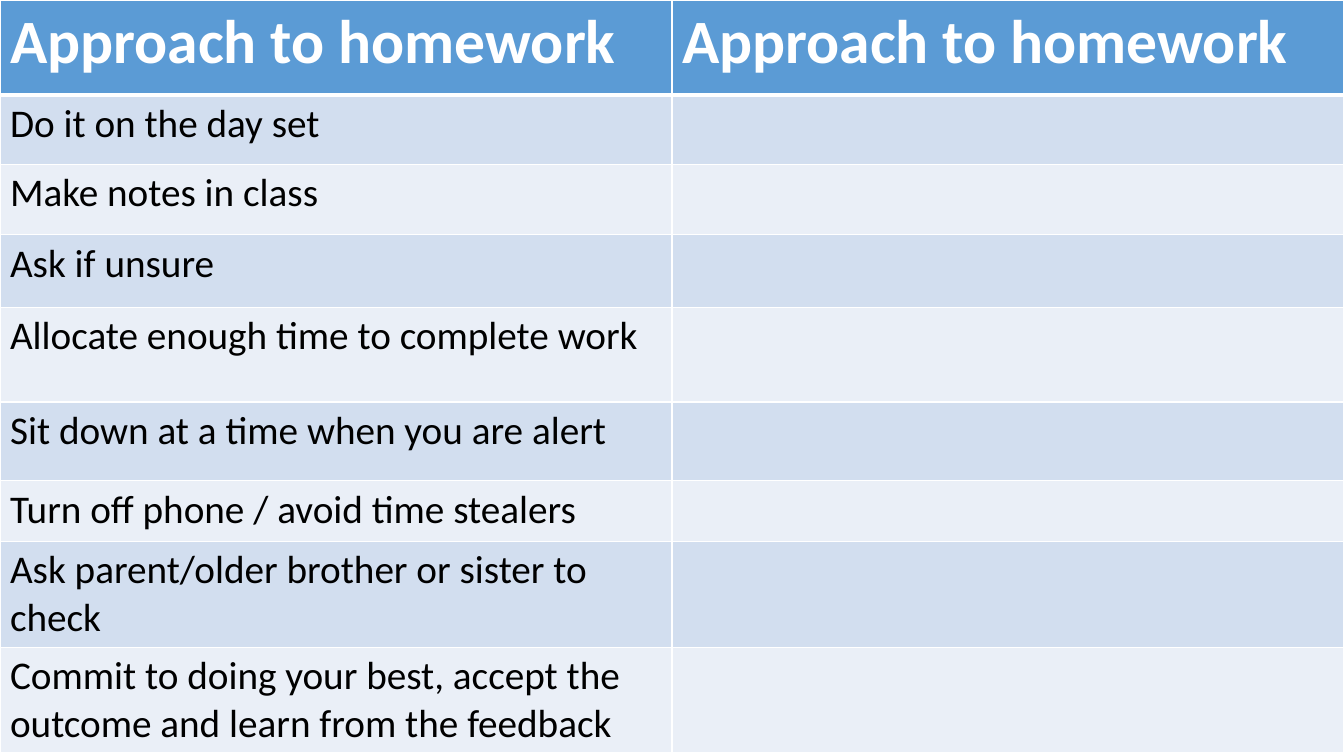
import pptx
import pptx.util
import pptx.dml.color
import pptx.oxml
import pptx.oxml.ns

Inches = pptx.util.Inches
HEAD = "Approach to homework"
TIPS = [
    "Do it on the day set",
    "Make notes in class",
    "Ask if unsure",
    "Allocate enough time to complete work",
    "Sit down at a time when you are alert",
    "Turn off phone / avoid time stealers",
    "Ask parent/older brother or sister to check",
    "Commit to doing your best, accept the outcome and learn from the feedback",
]
HEIGHTS = [0.94, 0.69, 0.7, 0.72, 0.94, 0.78, 0.6, 0.9, 0.94]


class Deck:
    """Holds the style and the current slide."""

    font = "Calibri"
    colors = {"head": "5B9BD5", "odd": "D2DEEF", "even": "EAEFF7",
              "white": "FFFFFF", "black": "000000"}

    def __init__(self, width, height):
        self.show = pptx.Presentation()
        self.show.slide_width = Inches(width)
        self.show.slide_height = Inches(height)
        self.slide = self.show.slides.add_slide(self.show.slide_layouts[6])

    def color(self, name):
        return pptx.dml.color.RGBColor.from_string(self.colors[name])

    def border(self, cell, widths):
        props = cell._tc.get_or_add_tcPr()
        for side, width in zip("LRTB", widths):
            props.append(pptx.oxml.parse_xml(
                f'<a:ln{side} {pptx.oxml.ns.nsdecls("a")} w="{pptx.util.Pt(width)}">'
                f'<a:solidFill><a:srgbClr val="{self.colors["white"]}"/></a:solidFill>'
                f'</a:ln{side}>'))

    def cell(self, cell, text, fill, ink, size, bold, widths):
        self.border(cell, widths)
        cell.fill.solid()
        cell.fill.fore_color.rgb = self.color(fill)
        cell.text_frame.text = text
        for run in cell.text_frame.paragraphs[0].runs:
            run.font.name = self.font
            run.font.size = pptx.util.Pt(size)
            run.font.bold = bold
            run.font.color.rgb = self.color(ink)

    def table(self, rows, heights, width):
        count = len(rows[0])
        frame = self.slide.shapes.add_table(
            len(rows), count, 0, 0, Inches(width), Inches(sum(heights)))
        table = frame.table
        for col in table.columns:
            col.width = Inches(width / count)
        for i, (row, height) in enumerate(zip(rows, heights)):
            table.rows[i].height = Inches(height)
            if i == 0:
                style = ("head", "white", 44, True, (1, 1, 1, 3))
            else:
                fill = "odd" if i % 2 else "even"
                style = (fill, "black", 28, False, (1, 1, 3 if i == 1 else 1, 1))
            for j, text in enumerate(row):
                self.cell(table.cell(i, j), text, *style)


def main():
    deck = Deck(13.33, 7.5)
    rows = [(HEAD, HEAD)] + [(tip, "") for tip in TIPS]
    deck.table(rows, HEIGHTS, 13.33)
    deck.show.save("out.pptx")


if __name__ == "__main__":
    main()
